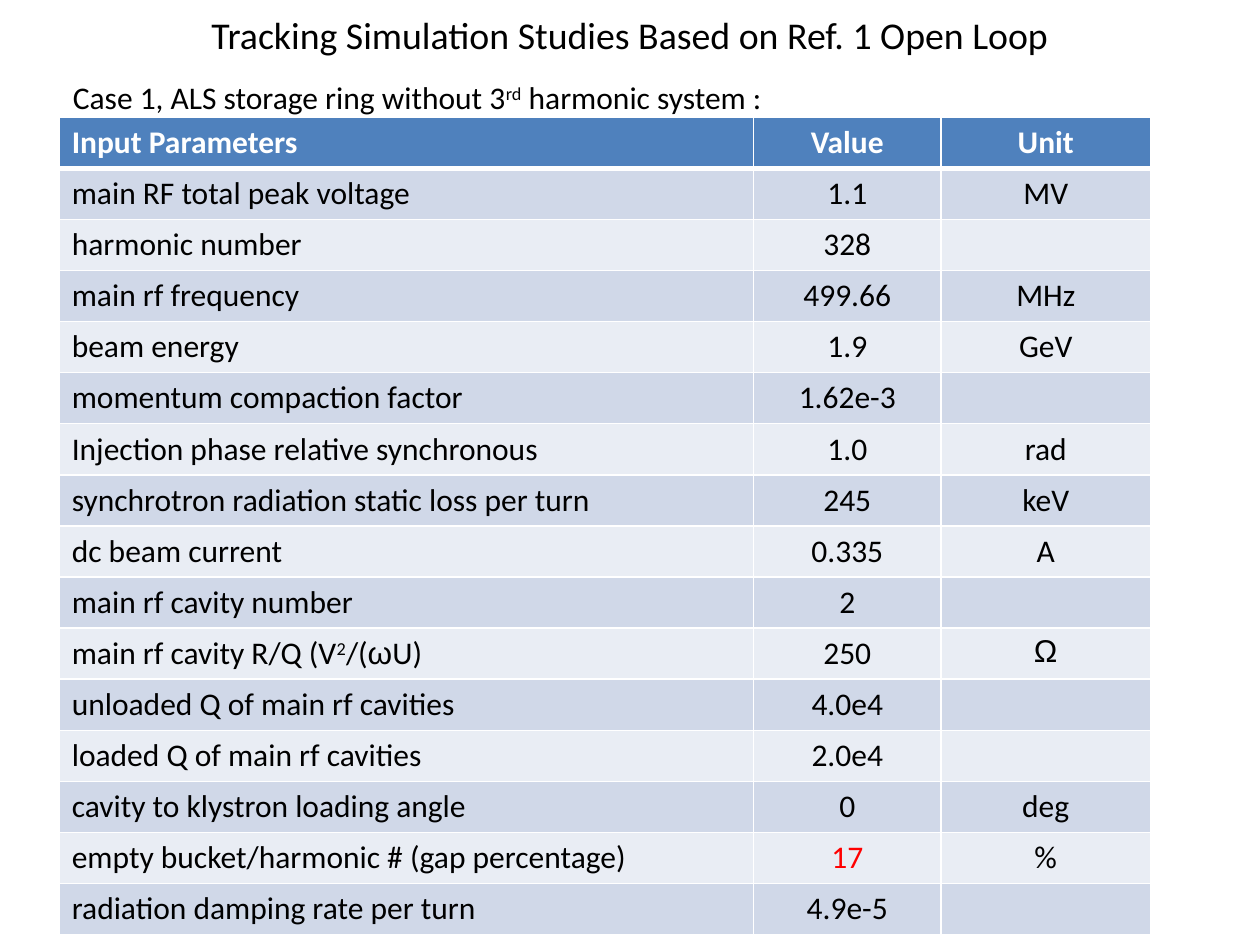
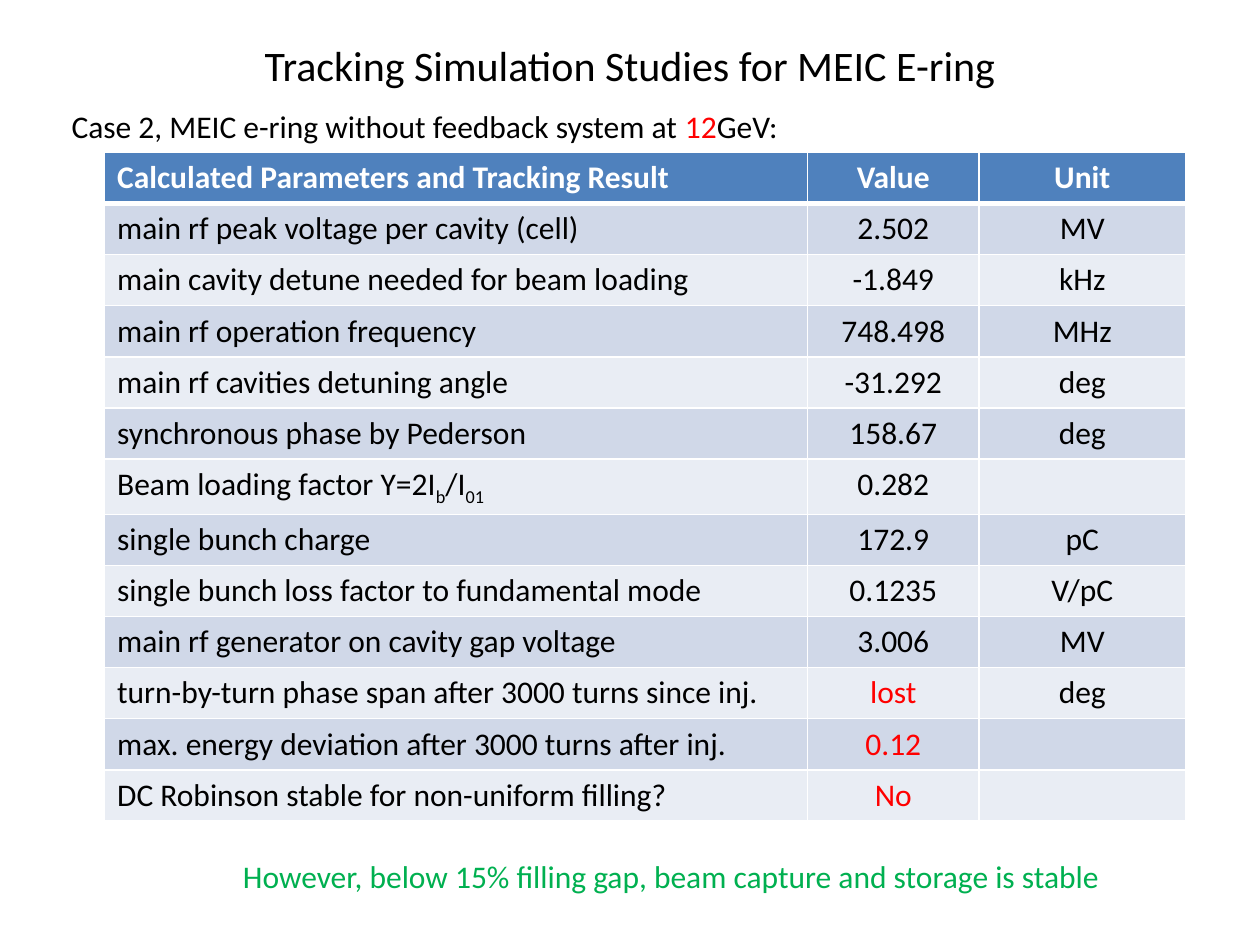
import pptx
import pptx.util
import pptx.dml.color
import pptx.enum.text
import pptx.oxml
import pptx.oxml.ns

Inches = pptx.util.Inches
Pt = pptx.util.Pt
PP_ALIGN = pptx.enum.text.PP_ALIGN
AUTO_SIZE = pptx.enum.text.MSO_AUTO_SIZE

COLORS = {
    "text": "000000", "white": "FFFFFF", "red": "FF0000", "green": "00B050",
    "header": "4F81BD", "odd": "D0D8E8", "even": "E9EDF4",
}
BODY = {"name": "Calibri", "size": 18, "color": "text", "bold": False}
HEADER = {**BODY, "color": "white", "bold": True}
RED = {"color": "red"}
SUP = {"baseline": 30}
SUB = {"baseline": -25}
GREEK = {"name": "Arial"}
ROW_HEIGHT = 0.41

# Content: a text is a string or a list of (string, format changes)
SLIDES = [
    {
        "title": "Tracking Simulation Studies Based on Ref. 1 Open Loop",
        "title_top": 0.01,
        "title_size": 21.6,
        "notes": [
            ([("Case 1, ALS storage ring without 3", {}), ("rd", SUP),
              (" harmonic system :", {})], (0.48, 0.57, 5.82, 0.4)),
        ],
        "table_at": (0.47, 0.93),
        "table_height": 6.49,
        "columns": (5.51, 1.49, 1.66),
        "rows": [
            ("Input Parameters", "Value", "Unit"),
            ("main RF total peak voltage", "1.1", "MV"),
            ("harmonic number", "328", ""),
            ("main rf frequency", "499.66", "MHz"),
            ("beam energy", "1.9", "GeV"),
            ("momentum compaction factor", "1.62e-3", ""),
            ("Injection phase relative synchronous", "1.0", "rad"),
            ("synchrotron radiation static loss per turn", "245", "keV"),
            ("dc beam current", "0.335", "A"),
            ("main rf cavity number", "2", ""),
            ([("main rf cavity R/Q (V", {}), ("2", SUP), ("/(", {}),
              ("ω", GREEK), ("U)", {})], "250", [("Ω", GREEK)]),
            ("unloaded Q of main rf cavities", "4.0e4", ""),
            ("loaded Q of main rf cavities", "2.0e4", ""),
            ("cavity to klystron loading angle", "0", "deg"),
            ("empty bucket/harmonic # (gap percentage)", [("17", RED)], "%"),
            ("radiation damping rate per turn", "4.9e-5", ""),
        ],
    },
    {
        "title": "Tracking Simulation Studies for MEIC E-ring",
        "title_top": 0.25,
        "title_size": 24,
        "notes": [
            ([("Case 2, MEIC e-ring without feedback system at ", {}),
              ("12", RED), ("GeV:", {})], (0.47, 0.8, 5.87, 0.4)),
            ([("However, below 15% filling gap, beam capture and storage is stable",
               {"color": "green"})], (1.83, 6.75, 7.08, 0.4)),
        ],
        "table_at": (0.83, 1.21),
        "table_height": 5.27,
        "columns": (5.58, 1.36, 1.64),
        "rows": [
            ("Calculated Parameters and Tracking Result", "Value", "Unit"),
            ("main rf peak voltage per cavity (cell)", "2.502", "MV"),
            ("main cavity detune needed for beam loading", "-1.849", "kHz"),
            ("main rf operation frequency", "748.498", "MHz"),
            ("main rf cavities detuning angle", "-31.292", "deg"),
            ("synchronous phase by Pederson", "158.67", "deg"),
            ([("Beam loading factor Y=2I", {}), ("b", SUB), ("/I", {}),
              ("01", SUB)], "0.282", ""),
            ("single bunch charge", "172.9", "pC"),
            ("single bunch loss factor to fundamental mode", "0.1235", "V/pC"),
            ("main rf generator on cavity gap voltage", "3.006", "MV"),
            ("turn-by-turn phase span after 3000 turns since inj.",
             [("lost", RED)], "deg"),
            ("max. energy deviation after 3000 turns after inj.",
             [("0.12", RED)], ""),
            ("DC Robinson stable for non-uniform filling?", [("No", RED)], ""),
        ],
    },
]


def rgb(name):
    return pptx.dml.color.RGBColor.from_string(COLORS[name])


def write(p, text, base, align=PP_ALIGN.LEFT):
    """Fill a paragraph with runs formatted as base plus their own changes."""
    p.alignment = align
    parts = [(text, {})] if isinstance(text, str) else text
    for words, changes in parts:
        if not words:
            continue
        r = p.add_run()
        r.text = words
        style = {**base, **changes}
        values = {"name": style["name"], "size": Pt(style["size"]),
                  "bold": style["bold"]}
        for key, value in values.items():
            setattr(r.font, key, value)
        r.font.color.rgb = rgb(style["color"])
        if "baseline" in style:
            r._r.get_or_add_rPr().set("baseline", str(style["baseline"] * 1000))


def set_borders(cell, widths):
    """Draw white cell borders; widths maps a side letter to points."""
    tcPr = cell._tc.get_or_add_tcPr()
    for side, width in widths.items():
        tcPr.append(pptx.oxml.parse_xml(
            f'<a:ln{side} {pptx.oxml.ns.nsdecls("a")} w="{Pt(width)}">'
            f'<a:solidFill><a:srgbClr val="{COLORS["white"]}"/></a:solidFill>'
            f'</a:ln{side}>'))


def add_title(s, text, top, size):
    sp = s.shapes.title
    place = {"left": 1.25, "top": top, "width": 7.5, "height": 0.53}
    for key, value in place.items():
        setattr(sp, key, Inches(value))
    tf = sp.text_frame
    tf.auto_size = AUTO_SIZE.NONE
    tf.vertical_anchor = pptx.enum.text.MSO_ANCHOR.MIDDLE
    write(tf.paragraphs[0], text, {**BODY, "size": size}, PP_ALIGN.CENTER)


def add_note(s, text, box):
    tf = s.shapes.add_textbox(*map(Inches, box)).text_frame
    tf.word_wrap = False
    tf.auto_size = AUTO_SIZE.SHAPE_TO_FIT_TEXT
    write(tf.paragraphs[0], text, BODY)


def add_parameter_table(s, rows, at, columns, height):
    size = (sum(columns), height)
    table = s.shapes.add_table(
        len(rows), len(columns), *map(Inches, at + size)).table
    table.horz_banding = False
    for column, width in zip(table.columns, columns):
        column.width = Inches(width)
    for i, row in enumerate(rows):
        table.rows[i].height = Inches(height / len(rows))
        fill = "header" if i == 0 else "odd" if i % 2 else "even"
        for j, text in enumerate(row):
            cell = table.cell(i, j)
            # The rule under the header is thicker
            set_borders(cell, {"L": 1, "R": 1, "T": 3 if i == 1 else 1,
                               "B": 3 if i == 0 else 1})
            cell.fill.solid()
            cell.fill.fore_color.rgb = rgb(fill)
            write(cell.text_frame.paragraphs[0], text,
                  BODY if i else HEADER,
                  PP_ALIGN.CENTER if j else PP_ALIGN.LEFT)


def main():
    prs = pptx.Presentation()
    prs.slide_width, prs.slide_height = Inches(10), Inches(7.5)
    title_only = prs.slide_layouts[5]
    for content in SLIDES:
        s = prs.slides.add_slide(title_only)
        add_title(s, content["title"], content["title_top"],
                  content["title_size"])
        add_parameter_table(s, content["rows"], content["table_at"],
                            content["columns"], content["table_height"])
        for text, box in content["notes"]:
            add_note(s, text, box)
    prs.save("out.pptx")


if __name__ == "__main__":
    main()
